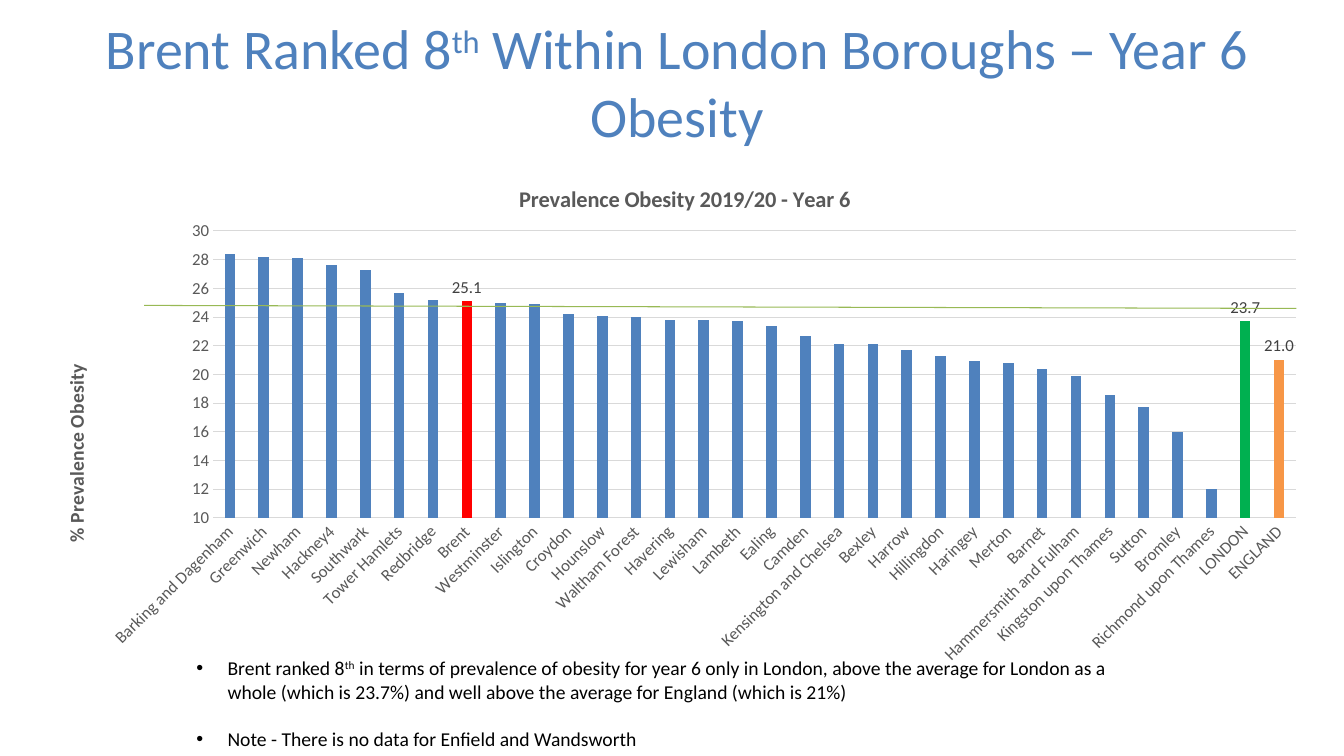
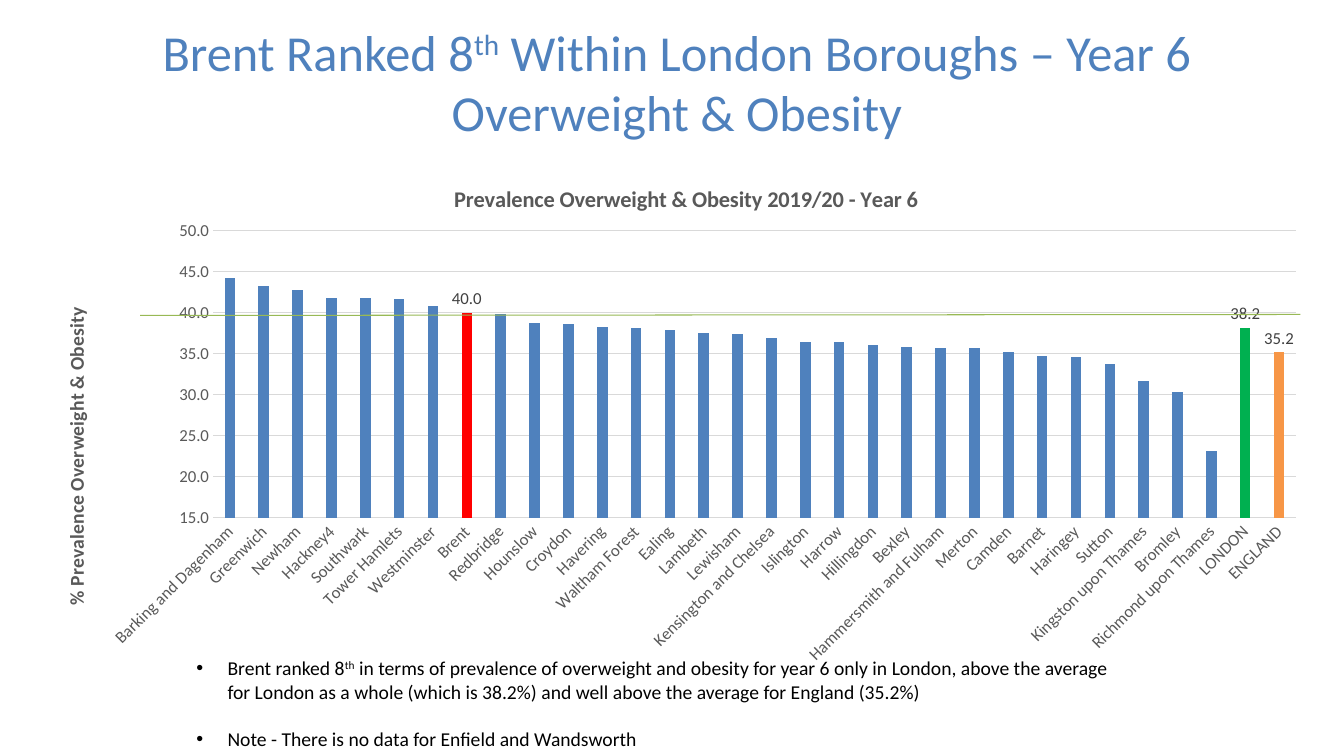
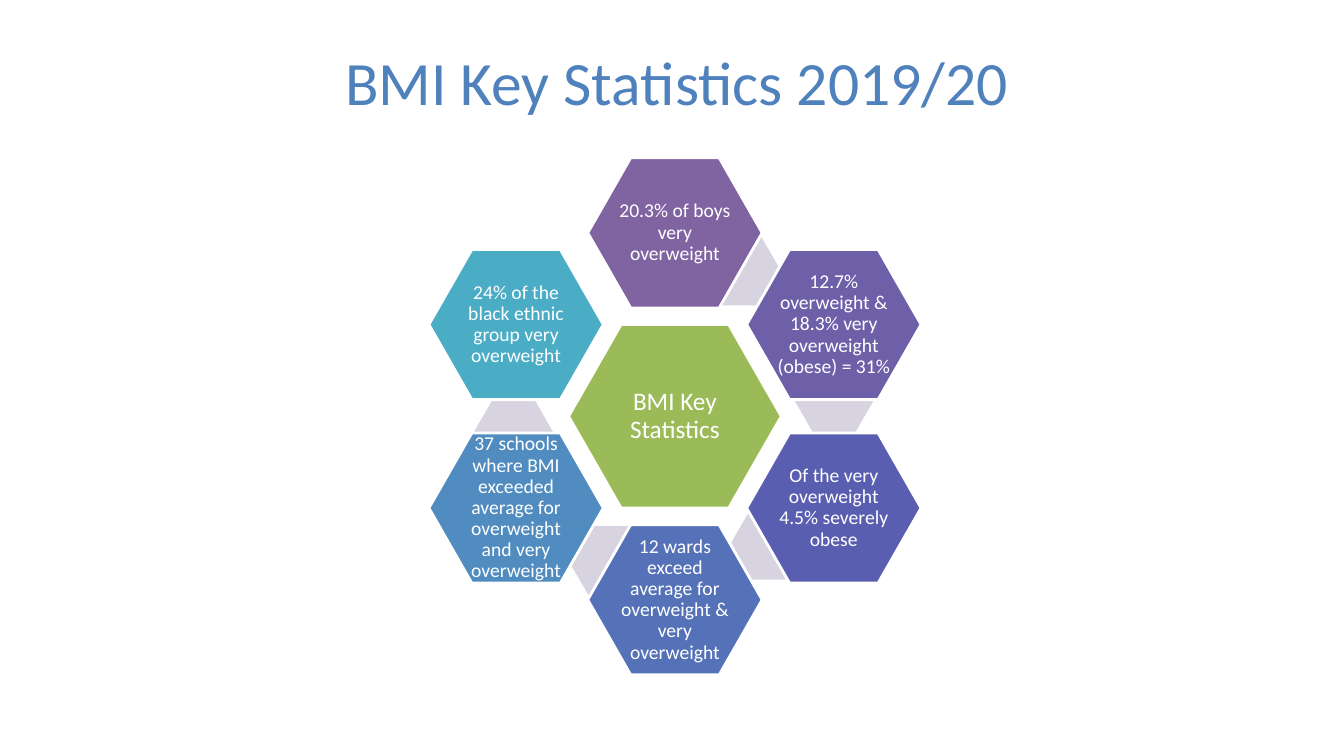
from math import cos, radians, sin

from lxml.etree import SubElement as Sub
from pptx import Presentation as Deck
from pptx.chart.data import CategoryChartData as Data
from pptx.dml.color import RGBColor as Rgb
from pptx.enum.chart import XL_CHART_TYPE as Kind
from pptx.enum.chart import XL_LABEL_POSITION as Spot
from pptx.enum.chart import XL_TICK_MARK as Tick
from pptx.enum.shapes import MSO_CONNECTOR as Link
from pptx.enum.shapes import MSO_SHAPE as Form
from pptx.enum.text import MSO_ANCHOR as Anchor
from pptx.enum.text import PP_ALIGN as Align
from pptx.oxml.ns import qn
from pptx.util import Inches, Pt

FONT = "Calibri"
HUES = {
    "blue": "4F81BD", "red": "FF0000", "green": "00B050", "orange": "F79646",
    "olive": "98B955", "lime": "9BBB59", "mist": "D8D3E0", "white": "FFFFFF",
    "black": "000000", "grey": "595959", "dark": "404040", "rule": "D9D9D9",
    "plum": "8064A2", "violet": "6E5FA9", "indigo": "5A5EB1",
    "cobalt": "5572B8", "azure": "508CBF", "teal": "4BACC6",
}
# Boxes are left, top, width, height in percent of the slide
HEAD = (2.33, 2.4, 96.08, 16.67)
CHART = (2.48, 20.93, 95.85, 68.4)
PLOT = (15.85, 30.56, 80.58, 37.96)
NOTES = (13.87, 86.13, 70.43, 13.87)
MARKS = {"Brent": "red", "LONDON": "green", "ENGLAND": "orange"}


def hue(name):
    return Rgb.from_string(HUES[name])


def style(font, size, tint):
    font.name, font.size, font.color.rgb = FONT, Pt(size), hue(tint)


def write(frame, *lines, size=14, tint="black", align=None, space=None,
          gap=0, bullet=False):
    """Fill a text frame, one paragraph a line; parts between ^ are raised."""
    for i, line in enumerate(lines):
        para = frame.add_paragraph() if i else frame.paragraphs[0]
        if bullet:
            props = para._p.get_or_add_pPr()
            props.set("marL", str(Inches(0.31)))
            props.set("indent", str(-Inches(0.31)))
            Sub(props, qn("a:buFont"), typeface="Arial")
            Sub(props, qn("a:buChar"), char="•")
        if align is not None:
            para.alignment = align
        if space:
            para.line_spacing = space
        if i and gap:
            para.space_before = Pt(gap)
        for j, part in enumerate(line.split("^")):
            run = para.add_run()
            run.text = part
            style(run.font, size, tint)
            if j % 2:
                run.font._element.set("baseline", "30000")


def place(part, index, left, top, wide=None, high=None):
    """Pin a chart part to a spot given in percent of the slide."""
    for old in part.findall(qn("c:layout")):
        part.remove(old)
    outer = Sub(part, qn("c:layout"))
    part.insert(index, outer)
    inner = Sub(outer, qn("c:manualLayout"))
    vals = {"xMode": "edge", "yMode": "edge",
            "x": (left - CHART[0]) / CHART[2],
            "y": (top - CHART[1]) / CHART[3]}
    if wide:
        Sub(inner, qn("c:layoutTarget"), val="inner")
        vals.update(w=wide / CHART[2], h=high / CHART[3])
    for key, val in vals.items():
        Sub(inner, qn("c:" + key), val=str(val))


class Show:
    def __init__(self):
        self.deck = Deck()
        self.deck.slide_width, self.deck.slide_height = Inches(13.33), Inches(7.5)

    def spot(self, *vals):
        sides = (self.deck.slide_width, self.deck.slide_height)
        return [int(val * sides[i % 2] / 100) for i, val in enumerate(vals)]

    def start(self, title, size):
        self.slide = self.deck.slides.add_slide(self.deck.slide_layouts[6])
        frame = self.box(HEAD)
        frame.vertical_anchor = Anchor.MIDDLE
        write(frame, title, size=size, tint="blue", align=Align.CENTER)

    def box(self, area):
        frame = self.slide.shapes.add_textbox(*self.spot(*area)).text_frame
        frame.word_wrap = True
        return frame

    def notes(self, *lines):
        write(self.box(NOTES), *lines, gap=17, bullet=True)

    def line(self, *ends):
        rule = self.slide.shapes.add_connector(Link.STRAIGHT, *self.spot(*ends))
        rule.line.color.rgb, rule.line.width = hue("olive"), Pt(0.75)
        Sub(rule._element.spPr, qn("a:effectLst"))

    def hexa(self, mid, size, tint, text="", pts=14, inset=0.02, adj=0.286):
        area = [m - s / 2 for m, s in zip(mid, size)] + list(size)
        shape = self.slide.shapes.add_shape(Form.HEXAGON, *self.spot(*area))
        shape.shadow.inherit = False
        shape.adjustments[0] = adj
        shape.fill.solid()
        shape.fill.fore_color.rgb = hue(tint)
        if not text:
            shape.line.fill.background()
            return
        shape.line.color.rgb, shape.line.width = hue("white"), Pt(2)
        frame = shape.text_frame
        frame.word_wrap, frame.vertical_anchor = True, Anchor.MIDDLE
        frame.margin_left = frame.margin_right = Inches(inset)
        frame.margin_top = frame.margin_bottom = Inches(inset)
        write(frame, text, size=pts, tint="white", align=Align.CENTER, space=0.9)

    def bars(self, title, left, label, top, rates, low, high, step, form):
        data = Data(number_format="0.0")
        data.categories = list(rates)
        data.add_series("Series 1", list(rates.values()))
        chart = self.slide.shapes.add_chart(
            Kind.COLUMN_CLUSTERED, *self.spot(*CHART), data).chart
        style(chart.font, 10, "black")
        chart.has_legend = False

        # Titles and plot area
        chart.has_title = True
        write(chart.chart_title.text_frame, title, size=16, tint="grey")
        place(chart.chart_title.element, 1, left, 23.8)
        value, cats = chart.value_axis, chart.category_axis
        name = value.axis_title
        write(name.text_frame, label, tint="grey")
        place(name.element, 1, 4.39, top)
        place(chart.element.xpath(".//c:plotArea")[0], 0, *PLOT)

        # Axes
        for axis in (value, cats):
            axis.major_tick_mark = axis.minor_tick_mark = Tick.NONE
            style(axis.tick_labels.font, 12, "grey")
        value.minimum_scale, value.maximum_scale = low, high
        value.major_unit = step
        value.tick_labels.number_format = form
        value.tick_labels.number_format_is_linked = False
        value.format.line.fill.background()
        for line in (value.major_gridlines.format.line, cats.format.line):
            line.color.rgb, line.width = hue("rule"), Pt(0.75)
        for where, angle in (("valAx/c:title/c:tx/c:rich", -90),
                             ("catAx/c:txPr", -45)):
            body = chart.element.xpath(f".//c:{where}/a:bodyPr")[0]
            body.set("rot", str(angle * 60000))
            body.set("vert", "horz")

        # Columns, with the marked ones labelled
        plot = chart.plots[0]
        plot.gap_width, plot.overlap = 219, -27
        plot.vary_by_categories = False
        row = plot.series[0]
        row.invert_if_negative = False
        row.format.fill.solid()
        row.format.fill.fore_color.rgb = hue("blue")
        for i, place_name in enumerate(rates):
            if place_name in MARKS:
                point = row.points[i]
                point.format.fill.solid()
                point.format.fill.fore_color.rgb = hue(MARKS[place_name])
                style(point.data_label.font, 12, "dark")
                point.data_label.position = Spot.OUTSIDE_END


OBESE = {
    "Barking and Dagenham": 28.4, "Greenwich": 28.2, "Newham": 28.1,
    "Hackney4": 27.6, "Southwark": 27.3, "Tower Hamlets": 25.7,
    "Redbridge": 25.2, "Brent": 25.1, "Westminster": 25.0,
    "Islington": 24.9, "Croydon": 24.2, "Hounslow": 24.1,
    "Waltham Forest": 24.0, "Havering": 23.8, "Lewisham": 23.8,
    "Lambeth": 23.7, "Ealing": 23.4, "Camden": 22.7,
    "Kensington and Chelsea": 22.1, "Bexley": 22.1, "Harrow": 21.7,
    "Hillingdon": 21.3, "Haringey": 20.9, "Merton": 20.8, "Barnet": 20.4,
    "Hammersmith and Fulham": 19.9, "Kingston upon Thames": 18.6,
    "Sutton": 17.7, "Bromley": 16.0, "Richmond upon Thames": 12.0,
    "LONDON": 23.7, "ENGLAND": 21.0,
}
OVER = {
    "Barking and Dagenham": 44.3, "Greenwich": 43.3, "Newham": 42.8,
    "Hackney4": 41.8, "Southwark": 41.8, "Tower Hamlets": 41.7,
    "Westminster": 40.9, "Brent": 40.0, "Redbridge": 39.9,
    "Hounslow": 38.8, "Croydon": 38.6, "Havering": 38.3,
    "Waltham Forest": 38.2, "Ealing": 37.9, "Lambeth": 37.6,
    "Lewisham": 37.4, "Kensington and Chelsea": 37.0, "Islington": 36.5,
    "Harrow": 36.5, "Hillingdon": 36.1, "Bexley": 35.9,
    "Hammersmith and Fulham": 35.7, "Merton": 35.7, "Camden": 35.2,
    "Barnet": 34.7, "Haringey": 34.6, "Sutton": 33.8,
    "Kingston upon Thames": 31.7, "Bromley": 30.4,
    "Richmond upon Thames": 23.1, "LONDON": 38.2, "ENGLAND": 35.2,
}
NO_DATA = "Note - There is no data for Enfield and Wandsworth"

# Ring of facts, clockwise from the top: colour, text, centre of the link before
RING = [
    ("plum", "20.3% of boys very overweight", (55.16, 35.87)),
    ("violet", "12.7% overweight & 18.3% very overweight (obese) = 31%",
     (62.06, 52.93)),
    ("indigo", "Of the very overweight 4.5% severely obese", (57.26, 72.13)),
    ("cobalt", "12 wards exceed average for overweight & very overweight",
     (45.26, 74.13)),
    ("azure", "37 schools where BMI exceeded average for overweight and very "
     "overweight", (38.21, 57.2)),
    ("teal", "24% of the black ethnic group very overweight", None),
]


def main():
    show = Show()

    # Obesity
    show.start("Brent Ranked 8^th^ Within London Boroughs – Year 6 Obesity", 40)
    show.bars("Prevalence Obesity 2019/20 - Year 6", 38.32,
              "% Prevalence Obesity", 47.75, OBESE, 10, 30, 2, "0")
    show.line(96.45, 40.8, 10.73, 40.4)
    show.notes("Brent ranked 8^th^ in terms of prevalence of obesity for year 6 "
               "only in London, above the average for London as a whole (which "
               "is 23.7%) and well above the average for England (which is 21%)",
               NO_DATA)

    # Overweight and obesity
    show.start("Brent Ranked 8^th^ Within London Boroughs – Year 6 "
               "Overweight & Obesity", 36)
    show.bars("Prevalence Overweight & Obesity 2019/20 - Year 6", 33.48,
              "% Prevalence Overweight & Obesity", 40.21, OVER, 15, 50, 5, "0.0")
    show.line(96.75, 41.6, 10.43, 41.73)
    show.notes("Brent ranked 8^th^ in terms of prevalence of overweight and "
               "obesity for year 6 only in London, above the average for London "
               "as a whole (which is 38.2%) and well above the average for "
               "England (35.2%)", NO_DATA)

    # Key statistics: a core with six facts around it
    show.start("BMI Key Statistics 2019/20", 44)
    core = (50.22, 55.07)
    show.hexa(core, (15.83, 24.27), "lime", "BMI Key Statistics",
              pts=18, inset=0.03)
    for i, (tint, text, link) in enumerate(RING):
        if link:
            show.hexa(link, (5.93, 9.07), "mist", adj=0.289)
        turn = radians(60 * i)
        mid = (core[0] + 13.65 * sin(turn), core[1] - 24.27 * cos(turn))
        show.hexa(mid, (12.98, 19.87), tint, text)

    show.deck.save("out.pptx")


if __name__ == "__main__":
    main()
